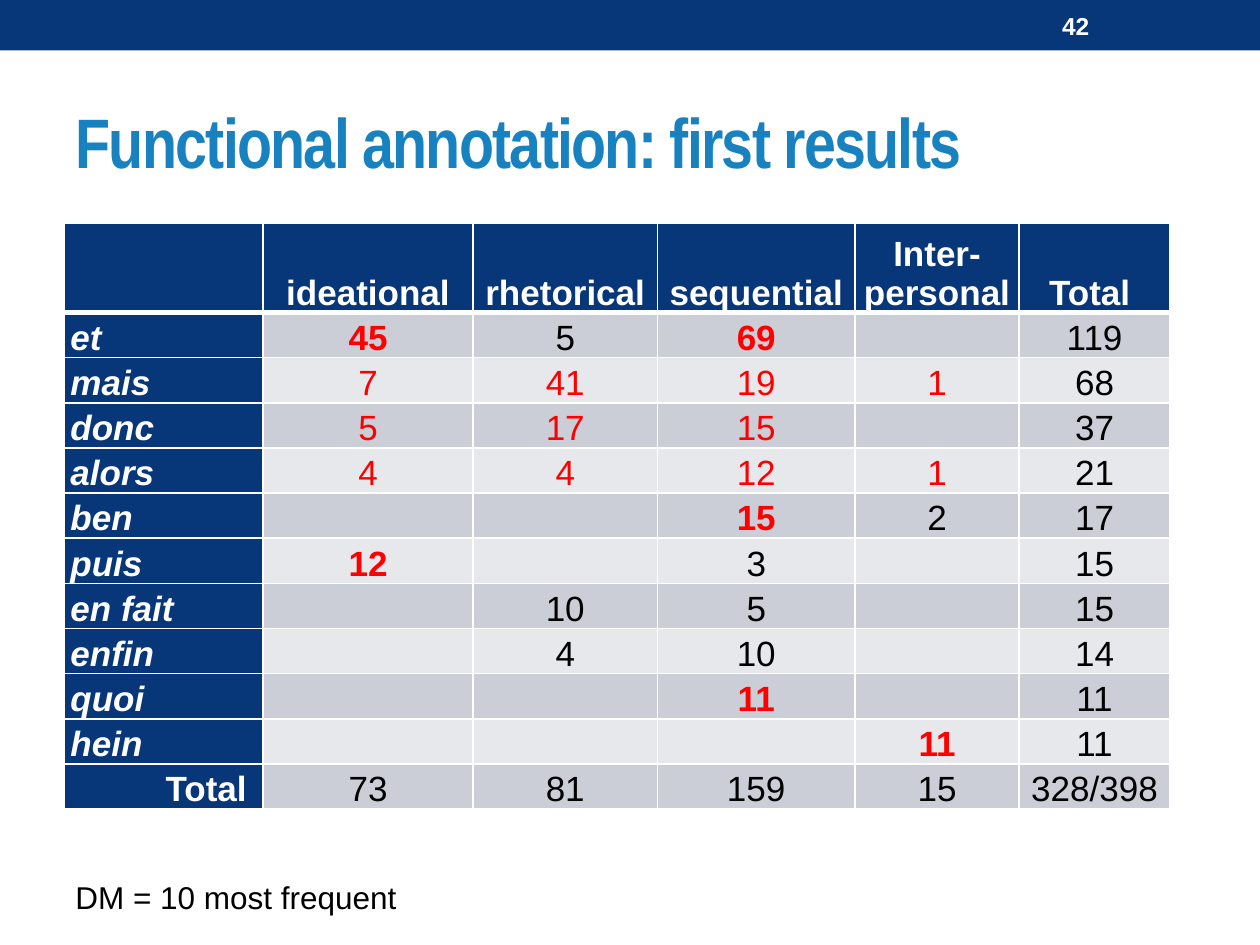
import lxml.etree
import pptx
import pptx.dml.color
import pptx.enum.shapes
import pptx.enum.text
import pptx.oxml.ns
import pptx.util
from pptx.util import Cm

NAVY = pptx.dml.color.RGBColor(0x07, 0x37, 0x79)
BLUE = pptx.dml.color.RGBColor(0x17, 0x82, 0xBF)
RED = pptx.dml.color.RGBColor(0xFF, 0x00, 0x00)
BLACK = pptx.dml.color.RGBColor(0x00, 0x00, 0x00)
WHITE = pptx.dml.color.RGBColor(0xFF, 0xFF, 0xFF)
DARK_BAND = pptx.dml.color.RGBColor(0xCC, 0xCE, 0xD7)
LIGHT_BAND = pptx.dml.color.RGBColor(0xE7, 0xE8, 0xEC)

LEFT = pptx.enum.text.PP_ALIGN.LEFT
CENTER = pptx.enum.text.PP_ALIGN.CENTER
RIGHT = pptx.enum.text.PP_ALIGN.RIGHT
MIDDLE = pptx.enum.text.MSO_ANCHOR.MIDDLE
BOTTOM = pptx.enum.text.MSO_ANCHOR.BOTTOM

COLUMN_WIDTHS = [4.01, 4.24, 3.71, 3.99, 3.3, 3.05]
HEADER_HEIGHT, ROW_HEIGHT = 1.8, 0.91
RESULTS = [
    ["", "ideational", "rhetorical", "sequential", "Inter-personal", "Total "],
    ["et", "45", "5", "69", "", "119"],
    ["mais", "7", "41", "19", "1", "68"],
    ["donc", "5", "17", "15", "", "37"],
    ["alors", "4", "4", "12", "1", "21"],
    ["ben", "", "", "15", "2", "17"],
    ["puis", "12", "", "3", "", "15"],
    ["en fait", "", "10", "5", "", "15"],
    ["enfin", "", "4", "10", "", "14"],
    ["quoi", "", "", "11", "", "11"],
    ["hein", "", "", "", "11", "11"],
    ["Total ", "73", "81", "159", "15", "328/398"],
]
MULTIFUNCTIONAL = {"mais", "donc", "alors"}  # counts in red
DOMINANT = {("et", 1), ("et", 3), ("ben", 3), ("puis", 1), ("quoi", 3), ("hein", 4)}  # bold red


def write(text_frame, text, size, color, bold=False, italic=False, font="Arial", align=LEFT):
    text_frame.text = text
    paragraph = text_frame.paragraphs[0]
    paragraph.alignment = align
    for run in paragraph.runs:
        run.font.name = font
        run.font.size = pptx.util.Pt(size)
        run.font.bold = bold
        run.font.italic = italic
        run.font.color.rgb = color


def add_text(slide, left, top, width, height, text, size, color, bold=False):
    text_box = slide.shapes.add_textbox(Cm(left), Cm(top), Cm(width), Cm(height))
    text_box.text_frame.word_wrap = True
    text_box.text_frame.vertical_anchor = MIDDLE
    write(text_box.text_frame, text, size, color, bold)


def add_banner(slide, left, top, width, height):
    banner = slide.shapes.add_shape(
        pptx.enum.shapes.MSO_SHAPE.RECTANGLE, Cm(left), Cm(top), Cm(width), Cm(height))
    banner.shadow.inherit = False
    banner.fill.solid()
    banner.fill.fore_color.rgb = NAVY
    banner.line.fill.background()
    # Slide number
    add_text(slide, left + 21.16, top + 0.05, 2.97, height - 0.1, "42", 14, WHITE, True)


def set_title(slide, left, top, width, height, text):
    title = slide.shapes.title
    title.left, title.top, title.width, title.height = Cm(left), Cm(top), Cm(width), Cm(height)
    title.text_frame.vertical_anchor = MIDDLE
    write(title.text_frame, text, 40, BLUE, bold=True, font="Arial Narrow")
    # Tightened letter spacing, in hundredths of a point
    title.text_frame.paragraphs[0].runs[0].font._element.set("spc", "-100")


def set_borders(cell, widths):
    properties = cell._tc.get_or_add_tcPr()
    for position, (side, width) in enumerate(widths.items()):
        line = lxml.etree.Element(
            pptx.oxml.ns.qn("a:" + side), w=str(int(pptx.util.Pt(width))))
        fill = lxml.etree.SubElement(line, pptx.oxml.ns.qn("a:solidFill"))
        lxml.etree.SubElement(fill, pptx.oxml.ns.qn("a:srgbClr"), val=str(WHITE))
        properties.insert(position, line)


def format_cell(cell, row, column, text):
    name = RESULTS[row][0]
    is_header, is_total = row == 0, row == len(RESULTS) - 1
    dominant = (name, column) in DOMINANT
    red = dominant or (name in MULTIFUNCTIONAL and column < len(COLUMN_WIDTHS) - 1)

    cell.margin_left = cell.margin_right = Cm(0.13)
    cell.margin_top = cell.margin_bottom = 0
    cell.vertical_anchor = BOTTOM
    cell.fill.solid()
    if is_header or column == 0:
        cell.fill.fore_color.rgb = NAVY
        color, bold = WHITE, True
    else:
        cell.fill.fore_color.rgb = DARK_BAND if row % 2 else LIGHT_BAND
        color, bold = (RED if red else BLACK), dominant
    if column:
        align = CENTER
    else:
        align = RIGHT if is_total else LEFT
    italic = column == 0 and not is_total
    write(cell.text_frame, text, 20, color, bold, italic, align=align)
    set_borders(cell, {"lnL": 1, "lnR": 1, "lnT": 3 if row == 1 else 1,
                       "lnB": 3 if is_header else 1})


def add_results_table(slide, left, top):
    height = HEADER_HEIGHT + ROW_HEIGHT * (len(RESULTS) - 1)
    table = slide.shapes.add_table(
        len(RESULTS), len(COLUMN_WIDTHS),
        Cm(left), Cm(top), Cm(sum(COLUMN_WIDTHS)), Cm(height)).table
    for column, width in zip(table.columns, COLUMN_WIDTHS):
        column.width = Cm(width)
    for row_index, values in enumerate(RESULTS):
        table.rows[row_index].height = Cm(ROW_HEIGHT if row_index else HEADER_HEIGHT)
        for column_index, text in enumerate(values):
            format_cell(table.cell(row_index, column_index), row_index, column_index, text)


def main():
    presentation = pptx.Presentation()
    presentation.slide_width, presentation.slide_height = Cm(25.4), Cm(19.05)
    slide = presentation.slides.add_slide(presentation.slide_layouts[5])
    add_banner(slide, 0, 0, 25.4, 1.02)
    set_title(slide, 1.27, 1.47, 22.86, 2.74, "Functional annotation: first results")
    add_results_table(slide, 1.29, 4.5)
    # Footnote
    add_text(slide, 1.27, 17.58, 10.8, 1.02, "DM = 10 most frequent", 18, BLACK)
    presentation.save("out.pptx")


if __name__ == "__main__":
    main()
